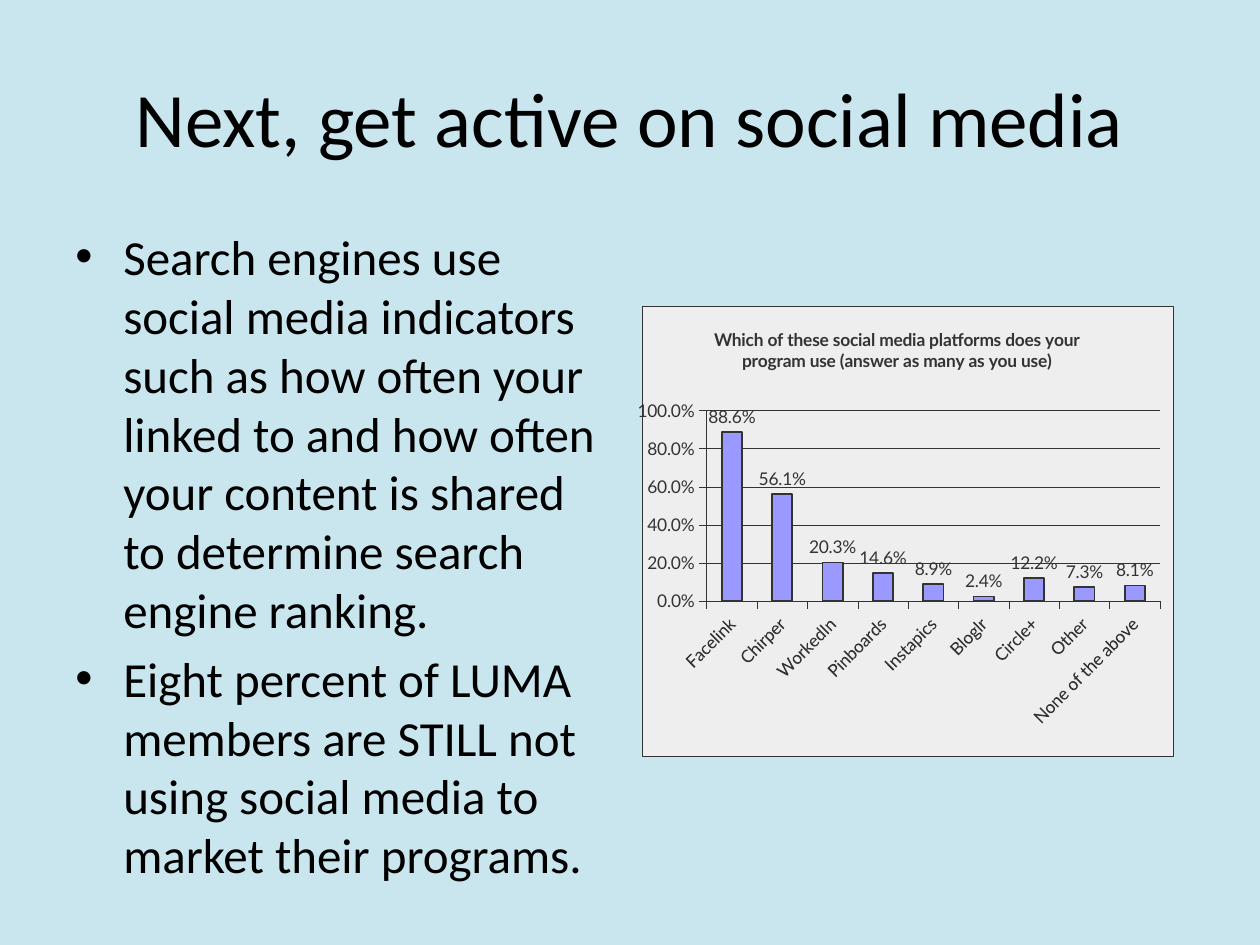
import lxml.etree
import pptx
import pptx.chart.data
import pptx.dml.color
import pptx.enum.chart
import pptx.enum.text
import pptx.oxml
import pptx.oxml.ns
import pptx.util

Pt = pptx.util.Pt
Color = pptx.dml.color.RGBColor.from_string
qn = pptx.oxml.ns.qn

THEME = {
    "background": Color("C9E6EE"),
    "text": {"name": "Calibri", "color": Color("000000")},
    "chart_text": {"name": "Lato", "size": Pt(10), "bold": False, "color": Color("333333")},
    "title_size": Pt(44),
    "body_size": Pt(28),
    "panel": "EEEEEE",
    "bar": Color("9999FF"),
    "ink": "333333",
    "hairline": Pt(0.25),
    "bar_line": Pt(1),
}
TITLE = "Next, get active on social media"
BULLETS = [
    "Search engines use social media indicators such as how often your linked to "
    "and how often your content is shared to determine search engine ranking.",
    "Eight percent of LUMA members are STILL not using social media to market their programs.",
]
QUESTION = "Which of these social media platforms does your program use (answer as many as you use)"
PLATFORM_SHARES = {
    "Facelink": 0.886, "Chirper": 0.561, "WorkedIn": 0.203, "Pinboards": 0.146,
    "Instapics": 0.089, "Bloglr": 0.024, "Circle+": 0.122, "Other": 0.073,
    "None of the above": 0.081,
}


def apply_format(target, values):
    """Set attributes from a dict; a color entry goes to target.color.rgb."""
    for name, value in values.items():
        if name == "color":
            target.color.rgb = value
        else:
            setattr(target, name, value)


def set_layout(parent, position, **values):
    """Give a chart part a manual layout in shares of the chart's size."""
    for old_layout in parent.findall(qn("c:layout")):
        parent.remove(old_layout)
    layout = lxml.etree.Element(qn("c:layout"))
    manual = lxml.etree.SubElement(layout, qn("c:manualLayout"))
    for name, value in values.items():
        lxml.etree.SubElement(manual, qn("c:" + name)).set("val", str(value))
    parent.insert(position, layout)


presentation = pptx.Presentation()
presentation.slide_width = pptx.util.Inches(10)
presentation.slide_height = pptx.util.Inches(7.5)
width, height = presentation.slide_width, presentation.slide_height
slide = presentation.slides.add_slide(presentation.slide_layouts[6])
slide.background.fill.solid()
slide.background.fill.fore_color.rgb = THEME["background"]

# Title and bullets
text_blocks = [
    ([TITLE], (0.05, 0.04, 0.9, 0.1667), THEME["title_size"], pptx.enum.text.MSO_ANCHOR.MIDDLE),
    (BULLETS, (0.05, 0.2333, 0.442, 0.66), THEME["body_size"], pptx.enum.text.MSO_ANCHOR.TOP),
]
for texts, (left, top, across, down), size, anchor in text_blocks:
    box = slide.shapes.add_textbox(
        int(left * width), int(top * height), int(across * width), int(down * height))
    apply_format(box.text_frame, {"word_wrap": True, "vertical_anchor": anchor})
    for index, text in enumerate(texts):
        frame = box.text_frame
        paragraph = frame.add_paragraph() if index else frame.paragraphs[0]
        run = paragraph.add_run()
        run.text = text
        apply_format(run.font, {**THEME["text"], "size": size})
        if texts is BULLETS:
            paragraph.space_before = int(size * 0.2)
            properties = paragraph._p.get_or_add_pPr()
            indent = pptx.util.Inches(0.38)
            properties.set("marL", str(indent))
            properties.set("indent", str(-indent))
            lxml.etree.SubElement(properties, qn("a:buFont")).set("typeface", "Arial")
            lxml.etree.SubElement(properties, qn("a:buChar")).set("char", "•")
        else:
            paragraph.alignment = pptx.enum.text.PP_ALIGN.CENTER

# Survey chart
chart_data = pptx.chart.data.CategoryChartData(number_format="0.0%")
chart_data.categories = list(PLATFORM_SHARES)
chart_data.add_series("Series 1", list(PLATFORM_SHARES.values()))
chart = slide.shapes.add_chart(
    pptx.enum.chart.XL_CHART_TYPE.COLUMN_CLUSTERED,
    int(0.506 * width), int(0.324 * height), int(0.425 * width), int(0.476 * height),
    chart_data).chart
chart.has_legend = False
apply_format(chart.font, THEME["chart_text"])

chart.has_title = True
chart.chart_title.include_in_layout = False
title_run = chart.chart_title.text_frame.paragraphs[0].add_run()
title_run.text = QUESTION
apply_format(title_run.font, {**THEME["chart_text"], "bold": True})
set_layout(chart.chart_title._element, 1, xMode="edge", yMode="edge", x=0.13, y=0.04)

plot = chart.plots[0]
apply_format(plot, {"gap_width": 150, "vary_by_categories": False, "has_data_labels": True})
apply_format(plot.data_labels, {
    "show_value": True, "number_format": "0.0%", "number_format_is_linked": False,
    "position": pptx.enum.chart.XL_LABEL_POSITION.OUTSIDE_END})
apply_format(plot.data_labels.font, THEME["chart_text"])
bars = plot.series[0]
bars.invert_if_negative = False
bars.format.fill.solid()
bars.format.fill.fore_color.rgb = THEME["bar"]
apply_format(bars.format.line, {"color": Color(THEME["ink"]), "width": THEME["bar_line"]})

hairline = {"color": Color(THEME["ink"]), "width": THEME["hairline"]}
for axis in (chart.category_axis, chart.value_axis):
    axis.major_tick_mark = pptx.enum.chart.XL_TICK_MARK.OUTSIDE
    apply_format(axis.tick_labels.font, THEME["chart_text"])
    apply_format(axis.format.line, hairline)
apply_format(chart.value_axis, {
    "minimum_scale": 0, "maximum_scale": 1, "major_unit": 0.2, "has_major_gridlines": True})
apply_format(chart.value_axis.major_gridlines.format.line, hairline)
apply_format(chart.value_axis.tick_labels, {
    "number_format": "0.0%", "number_format_is_linked": False})
category_text = chart.category_axis._element.find(qn("c:txPr")).find(qn("a:bodyPr"))
category_text.set("rot", str(-45 * 60000))
category_text.set("vert", "horz")

# Panel behind the chart and the plot
chart_element = chart._chartSpace.find(qn("c:chart"))
plot_area = chart_element.find(qn("c:plotArea"))
set_layout(plot_area, 0, layoutTarget="inner", xMode="edge", yMode="edge",
           x=0.122, y=0.232, w=0.854, h=0.424)
border = (f'<a:ln w="{THEME["hairline"]}"><a:solidFill><a:srgbClr val="{THEME["ink"]}"/>'
          '</a:solidFill></a:ln>')
panel_xml = (f'<c:spPr {pptx.oxml.ns.nsdecls("c", "a")}><a:solidFill>'
             f'<a:srgbClr val="{THEME["panel"]}"/></a:solidFill>%s</c:spPr>')
plot_area.append(pptx.oxml.parse_xml(panel_xml % "<a:ln><a:noFill/></a:ln>"))
chart_element.addnext(pptx.oxml.parse_xml(panel_xml % border))

presentation.save("out.pptx")
